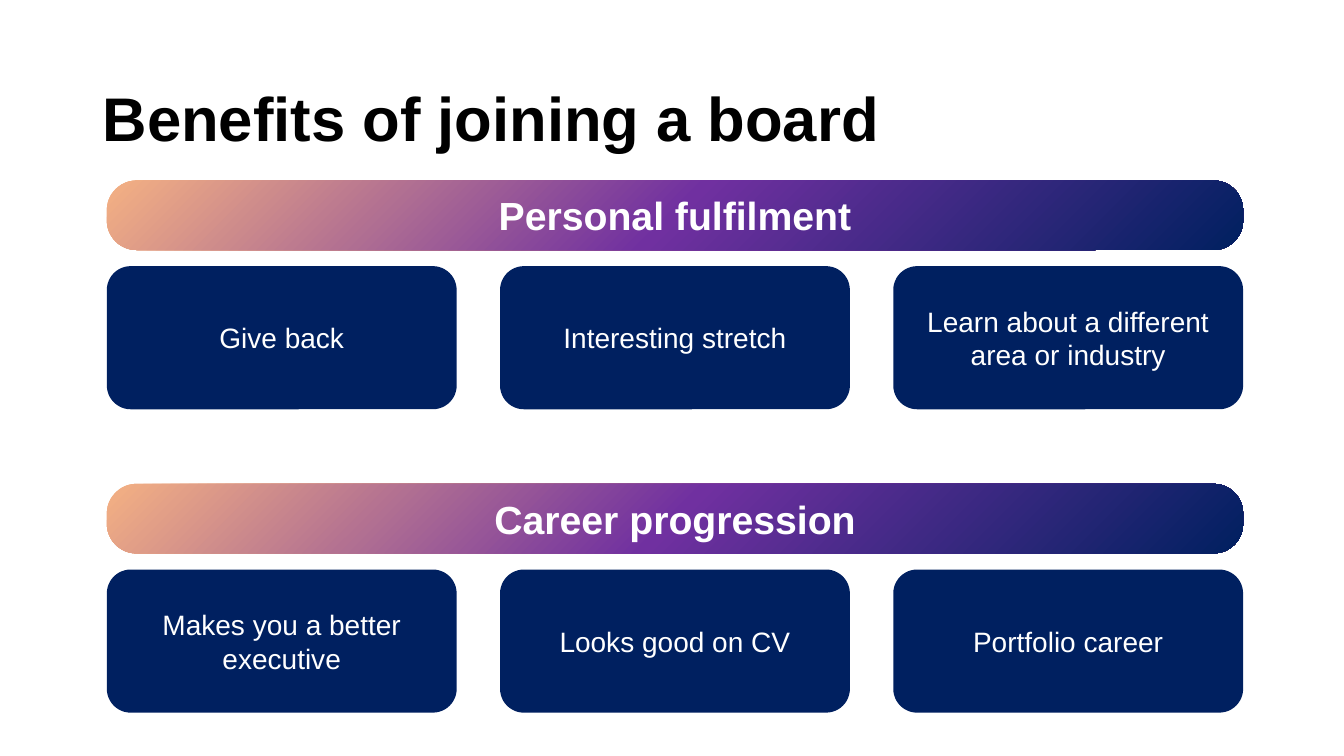
from copy import deepcopy
from pptx import Presentation
from pptx.dml.color import RGBColor
from pptx.enum.shapes import MSO_SHAPE as SHAPE
from pptx.enum.text import MSO_ANCHOR as ANCHOR, PP_ALIGN as ALIGN
from pptx.oxml.ns import qn
from pptx.util import Inches, Pt

NAVY = "002060"
GRADIENT = [(0, "F4B183"), (0.5, "7030A0"), (1, NAVY)]
LEFT, TOP = 1.06, 1.79
CARD_W, CARD_H, COL_STEP = 3.47, 1.42, 3.9
BAR_W, BAR_H = 2 * COL_STEP + CARD_W, 0.69
CARD_DROP, ROW_STEP = 0.85, 3.01

SECTIONS = [
    ("Personal fulfilment",
     ["Give back", "Interesting stretch", "Learn about a different area or industry"]),
    ("Career progression",
     ["Makes you a better executive", "Looks good on CV", "Portfolio career"]),
]


def rgb(value):
    return RGBColor.from_string(value)


def write(sp, text, size=20, color="FFFFFF", bold=False, align=ALIGN.CENTER,
          after=3, spacing=1.0):
    tf = sp.text_frame
    tf.word_wrap = True
    tf.vertical_anchor = ANCHOR.MIDDLE
    p = tf.paragraphs[0]
    p.alignment, p.space_after, p.line_spacing = align, Pt(after), spacing
    r = p.add_run()
    r.text = text
    r.font.name, r.font.size, r.font.bold = "Arial", Pt(size), bold
    r.font.color.rgb = rgb(color)


prs = Presentation()
prs.slide_width, prs.slide_height = Inches(13.33), Inches(7.5)
s = prs.slides.add_slide(prs.slide_layouts[6])

title = s.shapes.add_textbox(Inches(0.92), Inches(0.48), Inches(11.5), Inches(1.45))
write(title, "Benefits of joining a board", size=44, color="000000", bold=True,
      align=ALIGN.LEFT, after=0, spacing=0.9)

for row, (heading, benefits) in enumerate(SECTIONS):
    y = TOP + row * ROW_STEP
    bar = s.shapes.add_shape(SHAPE.ROUNDED_RECTANGLE, Inches(LEFT), Inches(y),
                             Inches(BAR_W), Inches(BAR_H))
    bar.adjustments[0] = 0.427
    bar.shadow.inherit = False
    bar.line.fill.background()
    bar.fill.gradient()
    bar.fill.gradient_angle = 315
    stops = bar._element.spPr.find(qn("a:gradFill")).find(qn("a:gsLst"))
    stops.append(deepcopy(stops[0]))
    for stop, (position, color) in zip(bar.fill.gradient_stops, GRADIENT):
        stop.position = position
        stop.color.rgb = rgb(color)
    write(bar, heading, size=28, bold=True)

    for col, benefit in enumerate(benefits):
        card = s.shapes.add_shape(SHAPE.ROUNDED_RECTANGLE,
                                  Inches(LEFT + col * COL_STEP), Inches(y + CARD_DROP),
                                  Inches(CARD_W), Inches(CARD_H))
        card.shadow.inherit = False
        card.line.fill.background()
        card.fill.solid()
        card.fill.fore_color.rgb = rgb(NAVY)
        write(card, benefit)

prs.save("out.pptx")
